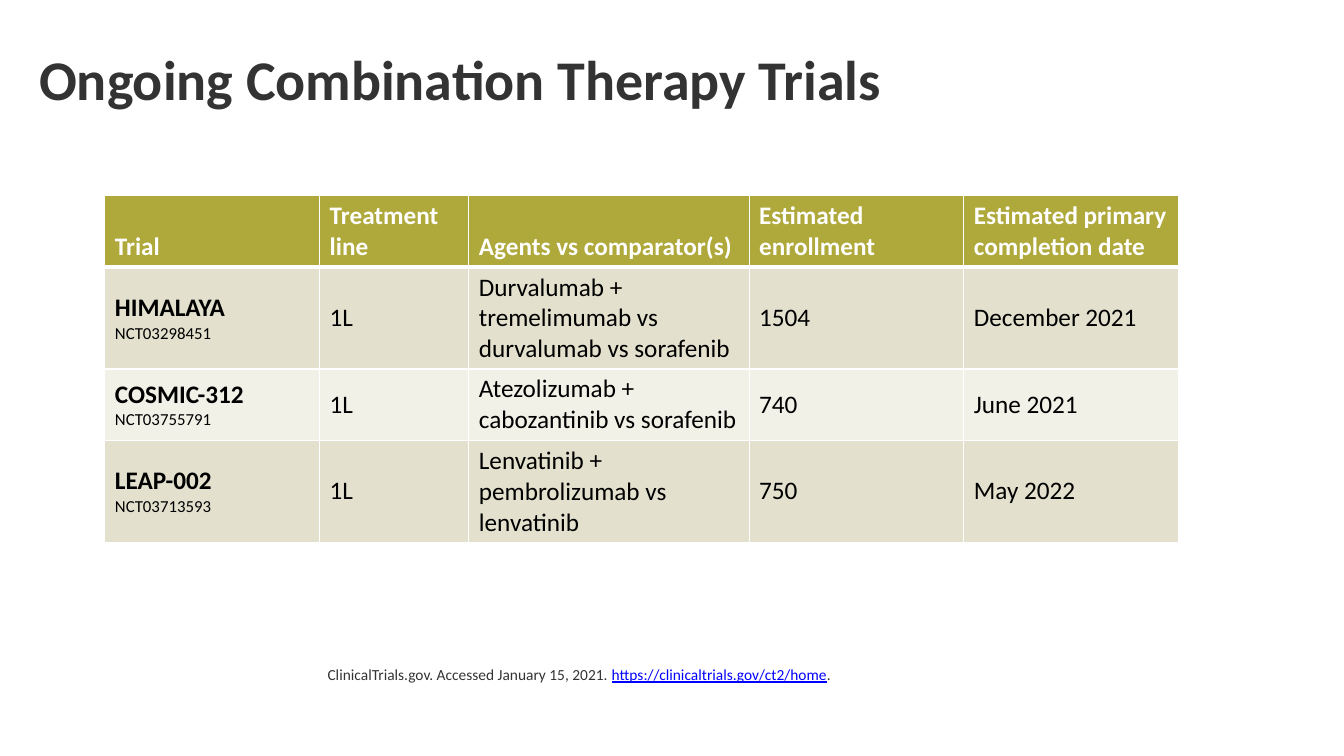
from lxml import etree
from pptx import Presentation
from pptx.dml.color import RGBColor
from pptx.enum.text import MSO_ANCHOR
from pptx.oxml.ns import qn
from pptx.util import Inches, Pt

TOP, MIDDLE, BOTTOM = MSO_ANCHOR.TOP, MSO_ANCHOR.MIDDLE, MSO_ANCHOR.BOTTOM
FONT = "Calibri"
WHITE, BLACK, GRAY, BLUE = "FFFFFF", "000000", "333333", "0000FF"
OLIVE, BANDS = "AFA83B", ("E3E1CE", "F2F1E8")

TITLE = "Ongoing Combination Therapy Trials"
HEADINGS = ["Trial", "Treatment line", "Agents vs comparator(s)",
            "Estimated enrollment", "Estimated primary completion date"]
TRIALS = [
    (("HIMALAYA", "NCT03298451"), "1L",
     "Durvalumab + tremelimumab vs durvalumab vs sorafenib", "1504", "December 2021"),
    (("COSMIC-312", "NCT03755791"), "1L",
     "Atezolizumab + cabozantinib vs sorafenib", "740", "June 2021"),
    (("LEAP-002", "NCT03713593"), "1L",
     "Lenvatinib + pembrolizumab vs lenvatinib", "750", "May 2022"),
]
SOURCE = "ClinicalTrials.gov. Accessed January 15, 2021. "
ADDRESS = "https://clinicaltrials.gov/ct2/home"

COLUMN_WIDTHS = [2.13, 1.48, 2.78, 2.13, 2.13]
ROW_HEIGHTS = [0.71, 1.01, 0.71, 1.01]


def rgb(color):
    return RGBColor.from_string(color)


def add_span(para, text, size, color, bold=False, underline=False):
    span = para.add_run()
    span.text = text
    font = span.font
    font.name, font.size, font.bold = FONT, Pt(size), bold
    font.underline = underline
    font.color.rgb = rgb(color)


def add_line_box(page, left, top, width, height, anchor):
    """Add a one-paragraph text box and return its paragraph."""
    frame = page.shapes.add_textbox(*map(Inches, (left, top, width, height))).text_frame
    frame.word_wrap = True
    frame.vertical_anchor = anchor
    para = frame.paragraphs[0]
    para.line_spacing = 0.9
    return para


def set_borders(cell, top, bottom):
    """Draw white borders; top and bottom are widths in points."""
    properties = cell._tc.get_or_add_tcPr()
    for side, width in (("L", 1), ("R", 1), ("T", top), ("B", bottom)):
        line = etree.SubElement(properties, qn(f"a:ln{side}"), w=str(Pt(width)))
        fill = etree.SubElement(line, qn("a:solidFill"))
        etree.SubElement(fill, qn("a:srgbClr"), val=WHITE)


def style_cell(cell, color, anchor, top, bottom):
    set_borders(cell, top, bottom)
    cell.fill.solid()
    cell.fill.fore_color.rgb = rgb(color)
    cell.vertical_anchor = anchor


def add_trial_table(page):
    table = page.shapes.add_table(
        len(ROW_HEIGHTS), len(COLUMN_WIDTHS), Inches(1.04), Inches(1.94),
        Inches(sum(COLUMN_WIDTHS)), Inches(sum(ROW_HEIGHTS))).table
    for column, width in zip(table.columns, COLUMN_WIDTHS):
        column.width = Inches(width)
    for row, height in zip(table.rows, ROW_HEIGHTS):
        row.height = Inches(height)

    for cell, heading in zip(table.rows[0].cells, HEADINGS):
        style_cell(cell, OLIVE, BOTTOM, top=1, bottom=3)
        add_span(cell.text_frame.paragraphs[0], heading, 18, WHITE, bold=True)

    for number, trial in enumerate(TRIALS, start=1):
        cells = list(table.rows[number].cells)
        for cell in cells:
            style_cell(cell, BANDS[(number - 1) % 2], MIDDLE,
                       top=3 if number == 1 else 1, bottom=1)
        (name, registration), *details = trial
        frame = cells[0].text_frame
        add_span(frame.paragraphs[0], name, 18, BLACK, bold=True)
        add_span(frame.add_paragraph(), registration, 12, BLACK)
        for cell, detail in zip(cells[1:], details):
            add_span(cell.text_frame.paragraphs[0], detail, 18, BLACK)


def main():
    deck = Presentation()
    deck.slide_width, deck.slide_height = Inches(13.33), Inches(7.5)
    page = deck.slides.add_slide(deck.slide_layouts[6])

    title = add_line_box(page, 0.29, 0.19, 12.78, 1.25, MIDDLE)
    add_span(title, TITLE, 40, GRAY, bold=True)

    add_trial_table(page)

    source = add_line_box(page, 3.15, 6.57, 9.92, 0.8, TOP)
    add_span(source, SOURCE, 11, GRAY)
    add_span(source, ADDRESS, 11, BLUE, underline=True)
    add_span(source, ".", 11, GRAY)

    deck.save("out.pptx")


if __name__ == "__main__":
    main()
